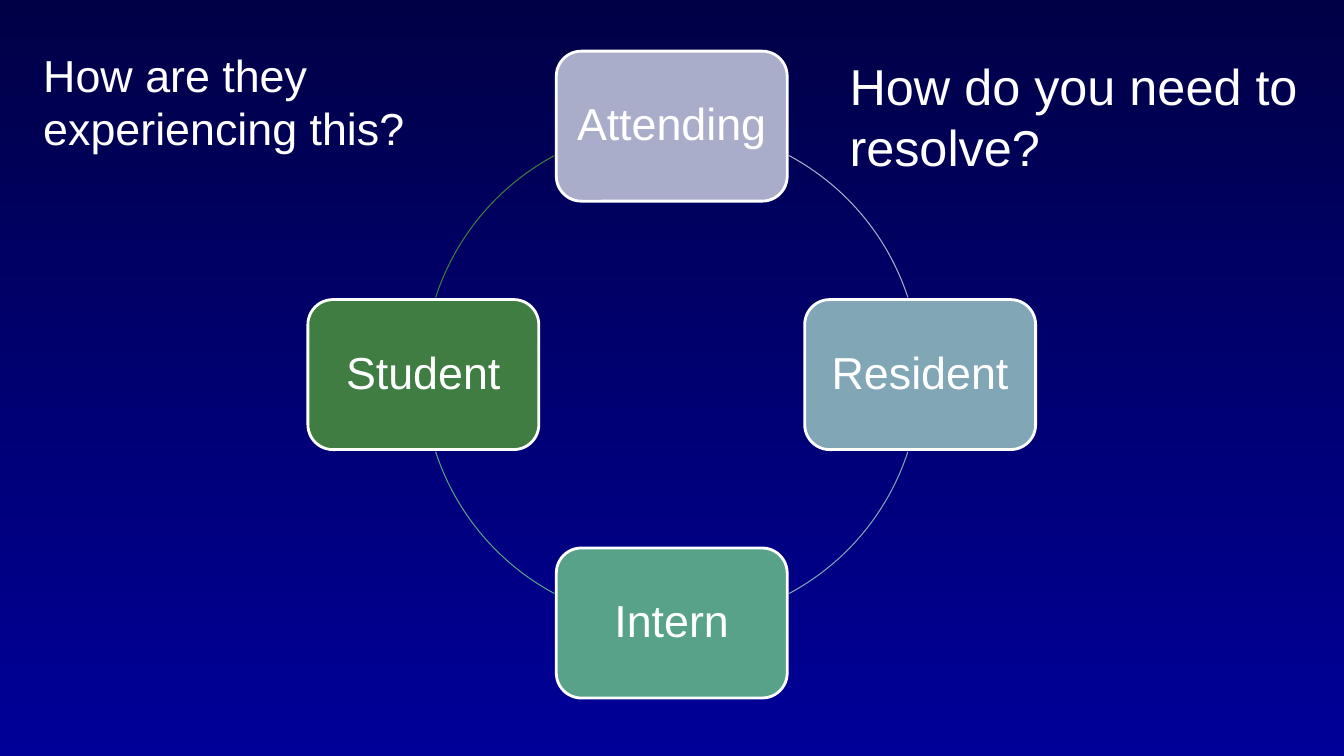
"""Build a slide with a cycle of four medical team roles and two questions."""
import math
from dataclasses import dataclass

import pptx
import pptx.dml.color
import pptx.enum.shapes
import pptx.enum.text
import pptx.shapes.autoshape
import pptx.slide
import pptx.text.text
import pptx.util

RGBColor = pptx.dml.color.RGBColor
Cm = pptx.util.Cm
Pt = pptx.util.Pt
MSO_SHAPE = pptx.enum.shapes.MSO_SHAPE
PP_ALIGN = pptx.enum.text.PP_ALIGN
MSO_ANCHOR = pptx.enum.text.MSO_ANCHOR

WHITE = RGBColor(0xFF, 0xFF, 0xFF)
NIGHT = RGBColor(0x00, 0x00, 0x47)
NAVY = RGBColor(0x00, 0x00, 0x99)
LAVENDER = RGBColor(0xAA, 0xAD, 0xCA)
STEEL = RGBColor(0x81, 0xA6, 0xB6)
TEAL = RGBColor(0x58, 0xA2, 0x8A)
GREEN = RGBColor(0x3F, 0x7D, 0x43)

CENTER_X, CENTER_Y, RADIUS = 16.93, 9.44, 6.26
ROLE_WIDTH, ROLE_HEIGHT = 5.82, 3.78
ARC_SPANS = [(298.2, 341.9), (18.1, 61.8), (118.2, 161.9), (198.1, 241.8)]
ADJUSTMENT_PER_DEGREE = 0.6


@dataclass(frozen=True)
class Role:
    title: str
    color: RGBColor


@dataclass(frozen=True)
class Question:
    wording: str
    left: float
    top: float
    width: float
    height: float
    size: int


ROLES = [
    Role("Attending", LAVENDER),
    Role("Resident", STEEL),
    Role("Intern", TEAL),
    Role("Student", GREEN),
]
QUESTIONS = [
    Question("How are they experiencing this?", 0.84, 1.07, 9.96, 3.0, 32),
    Question("How do you need to resolve?", 21.16, 1.27, 12.07, 3.33, 36),
]


def write_text(frame: pptx.text.text.TextFrame, text: str, *, size: int = 32,
               align: PP_ALIGN = PP_ALIGN.LEFT, anchor: MSO_ANCHOR = MSO_ANCHOR.TOP,
               spacing: float = 1.0) -> None:
    """Write one white paragraph with the given format."""
    frame.word_wrap = True
    frame.vertical_anchor = anchor
    paragraph = frame.paragraphs[0]
    paragraph.alignment = align
    paragraph.line_spacing = spacing
    run = paragraph.add_run()
    run.text = text
    run.font.name = "Arial"
    run.font.size = Pt(size)
    run.font.color.rgb = WHITE


def draw_role(slide: pptx.slide.Slide, role: Role, angle: float) -> None:
    """Draw a role box centred on the circle at an angle in degrees."""
    x = CENTER_X + RADIUS * math.cos(math.radians(angle))
    y = CENTER_Y + RADIUS * math.sin(math.radians(angle))
    box = slide.shapes.add_shape(
        MSO_SHAPE.ROUNDED_RECTANGLE, Cm(x - ROLE_WIDTH / 2), Cm(y - ROLE_HEIGHT / 2),
        Cm(ROLE_WIDTH), Cm(ROLE_HEIGHT))
    box.shadow.inherit = False
    box.fill.solid()
    box.fill.fore_color.rgb = role.color
    box.line.color.rgb = WHITE
    box.line.width = Pt(2)
    frame = box.text_frame
    frame.margin_left = frame.margin_right = Cm(0.3)
    frame.margin_top = frame.margin_bottom = Cm(0.3)
    write_text(frame, role.title, align=PP_ALIGN.CENTER,
               anchor=MSO_ANCHOR.MIDDLE, spacing=0.9)


def draw_arc(slide: pptx.slide.Slide, color: RGBColor, start: float, end: float) -> None:
    """Draw the thin part of the circle between two role boxes."""
    arc = slide.shapes.add_shape(
        MSO_SHAPE.ARC, Cm(CENTER_X - RADIUS), Cm(CENTER_Y - RADIUS),
        Cm(2 * RADIUS), Cm(2 * RADIUS))
    arc.adjustments[0] = start * ADJUSTMENT_PER_DEGREE
    arc.adjustments[1] = end * ADJUSTMENT_PER_DEGREE
    arc.shadow.inherit = False
    arc.fill.background()
    arc.line.color.rgb = color
    arc.line.width = Pt(0.75)


def draw_question(slide: pptx.slide.Slide, question: Question) -> None:
    """Draw a question beside the cycle."""
    box = slide.shapes.add_textbox(Cm(question.left), Cm(question.top),
                                   Cm(question.width), Cm(question.height))
    write_text(box.text_frame, question.wording, size=question.size)
    box.text_frame.auto_size = pptx.enum.text.MSO_AUTO_SIZE.SHAPE_TO_FIT_TEXT


def paint_background(slide: pptx.slide.Slide) -> None:
    """Fill the slide with a gradient that lightens downwards."""
    fill = slide.background.fill
    fill.gradient()
    fill.gradient_angle = 270
    for stop, color in zip(fill.gradient_stops, (NIGHT, NAVY)):
        stop.color.rgb = color


def main() -> None:
    """Build and save the slide."""
    presentation = pptx.Presentation()
    presentation.slide_width = Cm(33.87)
    presentation.slide_height = Cm(19.05)
    slide = presentation.slides.add_slide(presentation.slide_layouts[6])
    paint_background(slide)
    for index, (role, span) in enumerate(zip(ROLES, ARC_SPANS)):
        draw_role(slide, role, index * 360 / len(ROLES) - 90)
        draw_arc(slide, role.color, *span)
    for question in QUESTIONS:
        draw_question(slide, question)
    presentation.save("out.pptx")


if __name__ == "__main__":
    main()
